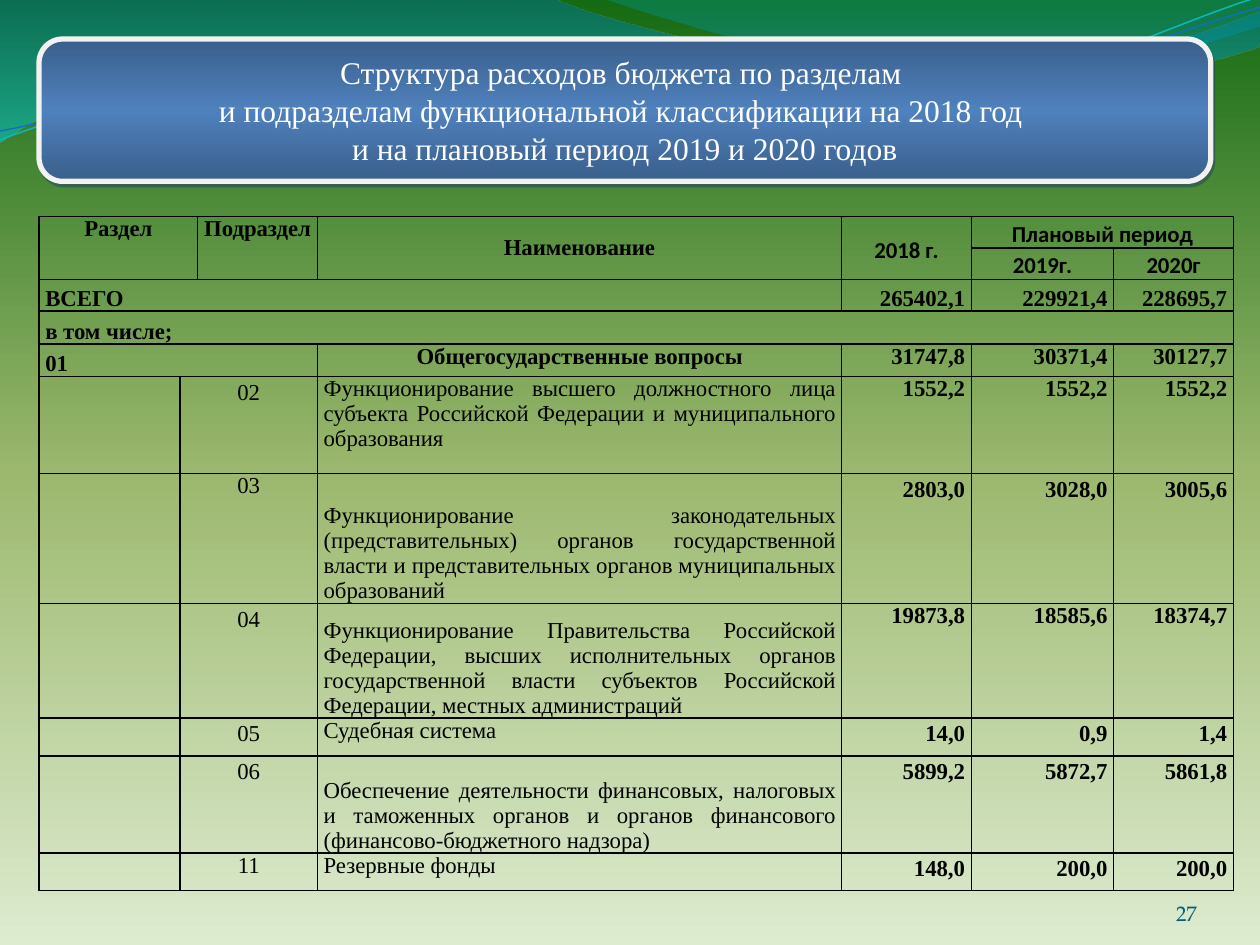
"""Build the budget expenditure slide with its table."""
from math import cos, radians, sin

from lxml.etree import SubElement as Sub
from pptx import Presentation
from pptx.dml.color import RGBColor as RGB
from pptx.enum.shapes import MSO_SHAPE as Form
from pptx.enum.text import MSO_ANCHOR as Anc, PP_ALIGN as Al
from pptx.oxml.ns import qn
from pptx.util import Inches, Pt

HUES = {"text": "000000", "white": "FFFFFF", "rim": "F2F2F2", "shade": "243F60",
        "blue": "4F81BD", "pale": "DDEBCF", "leaf": "9CB86E",
        "green": "156B13", "sea": "0074A1", "aqua": "00C6CF", "teal": "00A1A9",
        "sky": "008BBF", "cyan": "0AB8BF", "azure": "0F6FC6", "page": "045D75"}
SERIF, SANS = "Times New Roman", "Calibri"

TITLE = ["Структура расходов бюджета по разделам ",
         "и подразделам функциональной классификации на 2018 год ",
         "и на плановый период 2019 и 2020 годов"]
BACK = [(0, "pale", {}), (50, "leaf", {}), (100, "green", {})]
PANEL = [(0, "blue", {"shade": 50}), (50, "blue", {}), (100, "blue", {"shade": 50})]

WAVES = [
    ([(0, -0.01), (4.4, -0.01),
      (4.76, 0.17, 6.64, 0.63, 7.58, 0.63), (8.53, 0.63, 9.58, 0.26, 10, 0.09),
      (10.01, 0.36), (9.83, 0.44, 8.7, 0.76, 7.46, 0.75),
      (6.22, 0.75, 3.82, 0.28, 2.57, 0.34), (1.29, 0.35, 0.46, 0.83, -0.01, 1.13)],
     [(0, "sea", {"alpha": 45}), (100, "aqua", {"alpha": 55})]),
    ([(4.79, -0.01), (5.09, 0.11, 6.82, 0.62, 7.69, 0.65),
      (8.56, 0.69, 9.61, 0.32, 10, 0.21), (10, 0)],
     [(0, "teal", {"alpha": 30}), (80, "sky", {"alpha": 45})]),
]
TILT = 357.3
CURVES = [
    ([(0, 1.11), (0.48, 0.93, 1.58, 0.57, 2.77, 0.52),
      (3.95, 0.47, 5.93, 0.89, 7.13, 0.8), (8.33, 0.71, 9.38, 0.15, 9.98, -0.02)],
     (4.99, 0.57), "cyan", 0.85),
    ([(0, 1.04), (0.47, 0.96, 1.64, 0.61, 2.83, 0.56),
      (4.03, 0.51, 5.97, 0.83, 7.17, 0.75), (8.36, 0.67, 9.41, 0.21, 10, 0.06)],
     (5, 0.59), "azure", 0.75),
]

COLS = [1.12, 0.11, 0.95, 4.16, 1.03, 1.13, 0.95]
ROWS = [0.25, 0.25, 0.25, 0.26, 0.26, 0.77, 1.03, 0.91, 0.3, 0.77, 0.3]
LOOSE = {"line_spacing": 1.15, "space_after": Pt(10)}
STYLES = {
    "head": {"alignment": Al.CENTER, "space_before": Pt(12), "space_after": Pt(3)},
    "year": {"alignment": Al.CENTER, **LOOSE},
    "left": {"alignment": Al.LEFT},
    "mid": {"alignment": Al.CENTER},
    "full": {"alignment": Al.JUSTIFY},
    "right": {"alignment": Al.RIGHT},
    "sum": {"alignment": Al.RIGHT, **LOOSE},
}
TOP, MID, LOW = Anc.TOP, Anc.MIDDLE, Anc.BOTTOM
HEADS = [
    (0, 0, 2, 2, "Раздел", "head", TOP, SERIF),
    (0, 2, 2, 1, "Подраздел", "head", TOP, SERIF),
    (0, 3, 2, 1, "Наименование", "head", MID, SERIF),
    (0, 4, 2, 1, "2018 г.", "year", MID, SANS),
    (0, 5, 1, 2, "Плановый период", "year", TOP, SANS),
    (1, 5, 1, 1, "2019г.", "year", TOP, SANS),
    (1, 6, 1, 1, "2020г", "year", TOP, SANS),
    (2, 0, 1, 4, "ВСЕГО", "left", LOW, SERIF),
    (3, 0, 1, 7, "в том числе;", "left", LOW, SERIF),
    (4, 0, 1, 3, "01", "left", LOW, SERIF),
    (4, 3, 1, 1, "Общегосударственные вопросы", "mid", TOP, SERIF),
]
TOTALS = [(2, ["265402,1", "229921,4", "228695,7"], LOW),
          (4, ["31747,8", "30371,4", "30127,7"], TOP)]
PARTS = [
    ("02", "year", "Функционирование высшего должностного лица субъекта Российской "
     "Федерации и муниципального образования", "full", TOP,
     ["1552,2", "1552,2", "1552,2"], "right"),
    ("03", "mid", "Функционирование законодательных (представительных) органов "
     "государственной власти и представительных органов муниципальных образований",
     "full", LOW, ["2803,0", "3028,0", "3005,6"], "sum"),
    ("04", "year", "Функционирование Правительства Российской Федерации, высших "
     "исполнительных органов государственной власти субъектов Российской Федерации, "
     "местных администраций", "full", LOW, ["19873,8", "18585,6", "18374,7"], "right"),
    ("05", "year", "Судебная система", "left", TOP, ["14,0", "0,9", "1,4"], "sum"),
    ("06", "year", "Обеспечение деятельности финансовых, налоговых и таможенных органов "
     "и органов финансового (финансово-бюджетного надзора)", "full", LOW,
     ["5899,2", "5872,7", "5861,8"], "sum"),
    ("11", "mid", "Резервные фонды", "full", TOP, ["148,0", "200,0", "200,0"], "sum"),
]


def put(obj, vals):
    for key, val in vals.items():
        setattr(obj, key, val)


def ink(font, face, size, hue, bold=False):
    put(font, {"name": face, "size": Pt(size), "bold": bold})
    font.color.rgb = RGB.from_string(HUES[hue])


def tint(home, hue, mods):
    clr = Sub(home, qn("a:srgbClr"), val=HUES[hue])
    for name, val in mods.items():
        Sub(clr, qn("a:" + name), val=str(val * 1000))


def grade(fill, home, stops, angle):
    fill.gradient()
    grad = home.find(".//" + qn("a:gradFill"))
    for kid in list(grad):
        grad.remove(kid)
    group = Sub(grad, qn("a:gsLst"))
    for pos, hue, mods in stops:
        tint(Sub(group, qn("a:gs"), pos=str(pos * 1000)), hue, mods)
    Sub(grad, qn("a:lin"), ang=str(angle * 60000), scaled="0")


def level(spot, hub):
    a, dx, dy = radians(360 - TILT), spot[0] - hub[0], spot[1] - hub[1]
    return hub[0] + dx * cos(a) - dy * sin(a), hub[1] + dx * sin(a) + dy * cos(a)


def draw(shapes, steps, hub=None):
    spots = [step[n:n + 2] for step in steps for n in range(0, len(step), 2)]
    if hub:
        spots = [level(spot, hub) for spot in spots]
    spots = [(Inches(x), Inches(y)) for x, y in spots]
    pen = shapes.build_freeform(*spots[0])
    pen.add_line_segments(spots[1:], close=not hub)
    shape = pen.convert_to_shape()
    lines = iter(list(shape._element.iter(qn("a:lnTo"))))
    for step in steps[1:]:
        first = next(lines)
        if len(step) == 6:
            first.tag = qn("a:cubicBezTo")
            for line in (next(lines), next(lines)):
                first.append(line[0])
                line.getparent().remove(line)
    shape.shadow.inherit = False
    return shape


def waves(shapes):
    for steps, stops in WAVES:
        wave = draw(shapes, steps)
        grade(wave.fill, wave._element.spPr, stops, 90)
        wave.line.fill.background()
    group = shapes.add_group_shape()
    for steps, hub, hue, width in CURVES:
        curve = draw(group.shapes, steps, hub)
        curve.rotation = TILT
        curve.fill.background()
        curve.line.color.rgb = RGB.from_string(HUES[hue])
        curve.line.width = Pt(width)


def banner(shapes):
    panel = shapes.add_shape(Form.FLOWCHART_ALTERNATE_PROCESS, Inches(0.31), Inches(0.31),
                             Inches(9.3), Inches(1.13))
    props = panel._element.spPr
    grade(panel.fill, props, PANEL, 90)
    panel.line.color.rgb = RGB.from_string(HUES["rim"])
    panel.line.width = Pt(3)
    panel.shadow.inherit = False
    glow = Sub(props.find(qn("a:effectLst")), qn("a:outerShdw"), blurRad="0",
               dist=str(Pt(2.2)), dir=str(63 * 60000), algn="ctr", rotWithShape="0")
    tint(glow, "shade", {"alpha": 50})
    frame = panel.text_frame
    frame.text = "\n".join(TITLE)
    put(frame, {"word_wrap": True, "vertical_anchor": MID})
    for para in frame.paragraphs:
        para.alignment = Al.CENTER
        ink(para.runs[0].font, SERIF, 18, "white")


def edge(cell):
    cell.fill.background()
    props = cell._tc.get_or_add_tcPr()
    for n, side in enumerate(("lnL", "lnR", "lnT", "lnB")):
        line = Sub(props, qn("a:" + side), w=str(Pt(1)))
        tint(Sub(line, qn("a:solidFill")), "text", {})
        props.insert(n, line)


def entries():
    yield from HEADS
    for row, vals, anchor in TOTALS:
        for n, val in enumerate(vals):
            yield row, 4 + n, 1, 1, val, "right", anchor, SERIF
    for row, (code, look, name, flow, anchor, vals, style) in enumerate(PARTS, 5):
        yield row, 1, 1, 2, code, look, TOP, SERIF
        yield row, 3, 1, 1, name, flow, anchor, SERIF
        for n, val in enumerate(vals):
            yield row, 4 + n, 1, 1, val, style, TOP, SERIF


def budget(shapes):
    table = shapes.add_table(len(ROWS), len(COLS), Inches(0.31), Inches(1.72),
                             Inches(sum(COLS)), Inches(sum(ROWS))).table
    put(table, {"first_row": False, "horz_banding": False})
    for col, width in zip(table.columns, COLS):
        col.width = Inches(width)
    for row, height in zip(table.rows, ROWS):
        row.height = Inches(height)
    for cell in table.iter_cells():
        edge(cell)
        put(cell, {"margin_left": Inches(0.05), "margin_right": Inches(0.05),
                   "margin_top": 0, "margin_bottom": 0})
        Sub(cell.text_frame.paragraphs[0]._p, qn("a:endParaRPr"), sz="1300")
    for row, col, high, wide, text, style, anchor, face in entries():
        cell = table.cell(row, col)
        if high * wide > 1:
            cell.merge(table.cell(row + high - 1, col + wide - 1))
        cell.text = text
        cell.vertical_anchor = anchor
        para = cell.text_frame.paragraphs[0]
        put(para, STYLES[style])
        ink(para.runs[0].font, face, 13, "text", row < 5 or col > 3)


def number(shapes):
    frame = shapes.add_textbox(Inches(8.67), Inches(6.95), Inches(0.83), Inches(0.4)).text_frame
    put(frame, {"word_wrap": True, "vertical_anchor": LOW, "margin_left": 0,
                "margin_right": 0, "margin_top": 0, "margin_bottom": 0})
    frame.text = "27"
    para = frame.paragraphs[0]
    para.alignment = Al.RIGHT
    ink(para.runs[0].font, "TeX Gyre Pagella", 12, "page")


def main():
    deck = Presentation()
    put(deck, {"slide_width": Inches(10), "slide_height": Inches(7.5)})
    slide = deck.slides.add_slide(deck.slide_layouts[6])
    grade(slide.background.fill, slide._element, BACK, 270)
    for build in (waves, number, banner, budget):
        build(slide.shapes)
    deck.save("out.pptx")


if __name__ == "__main__":
    main()
